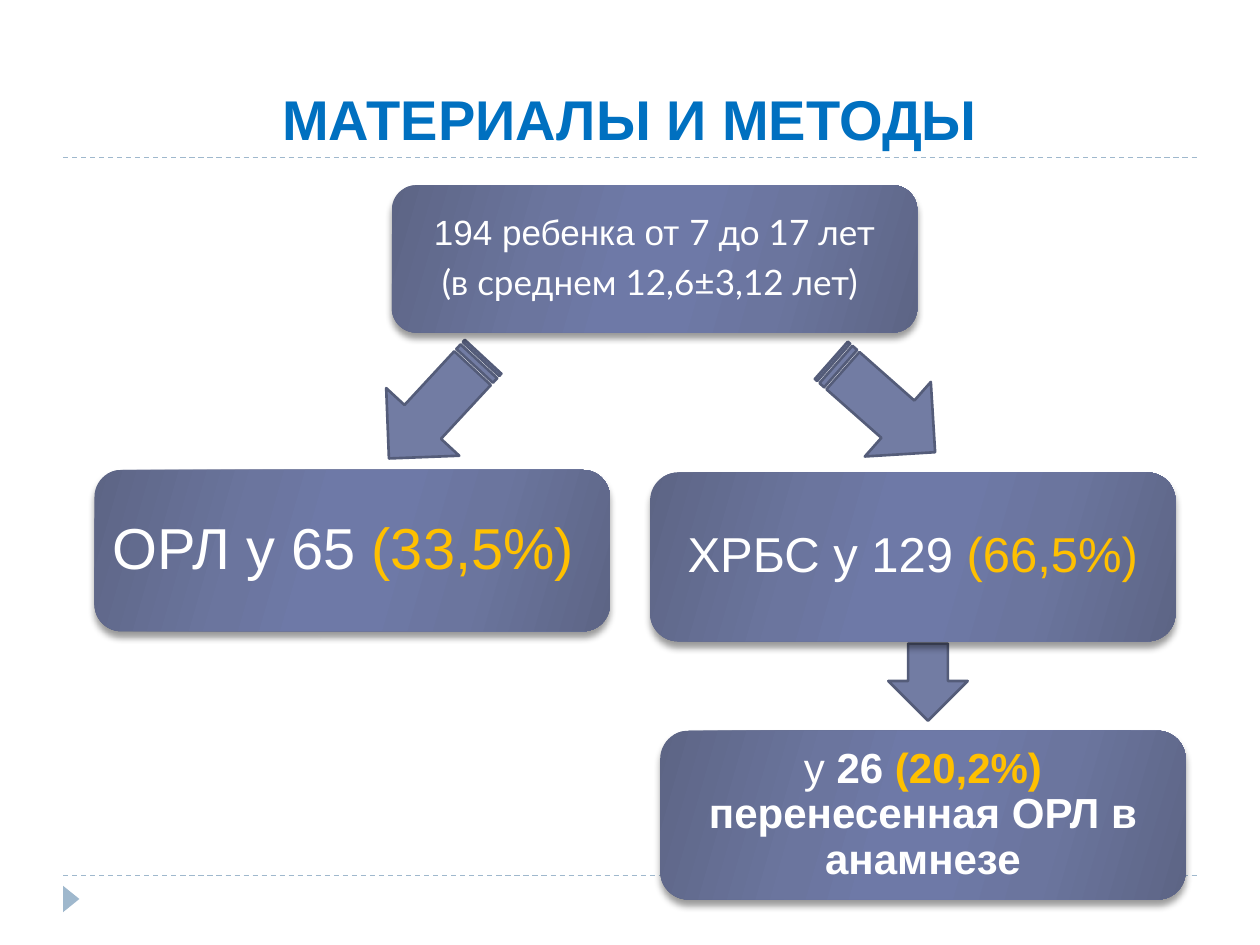
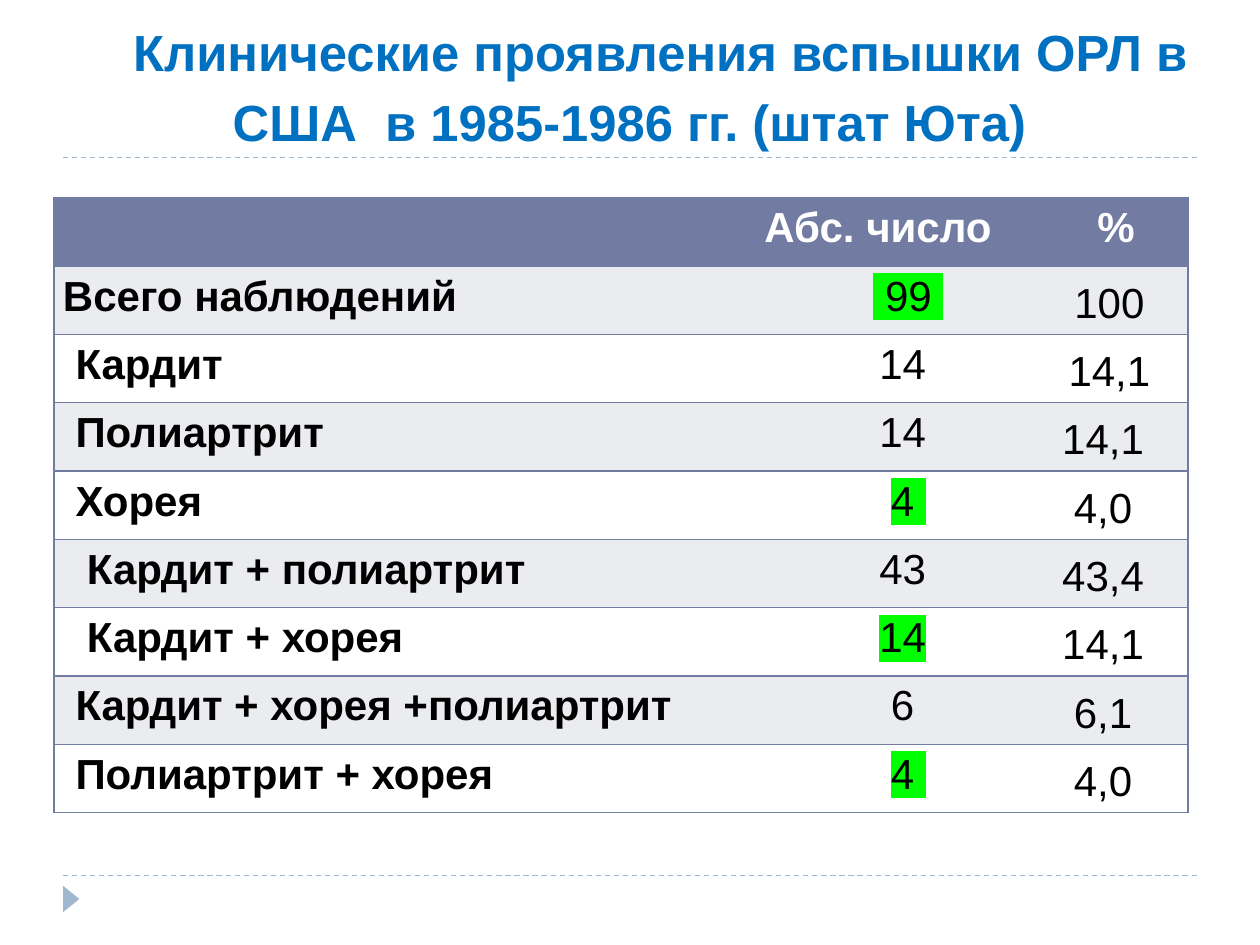
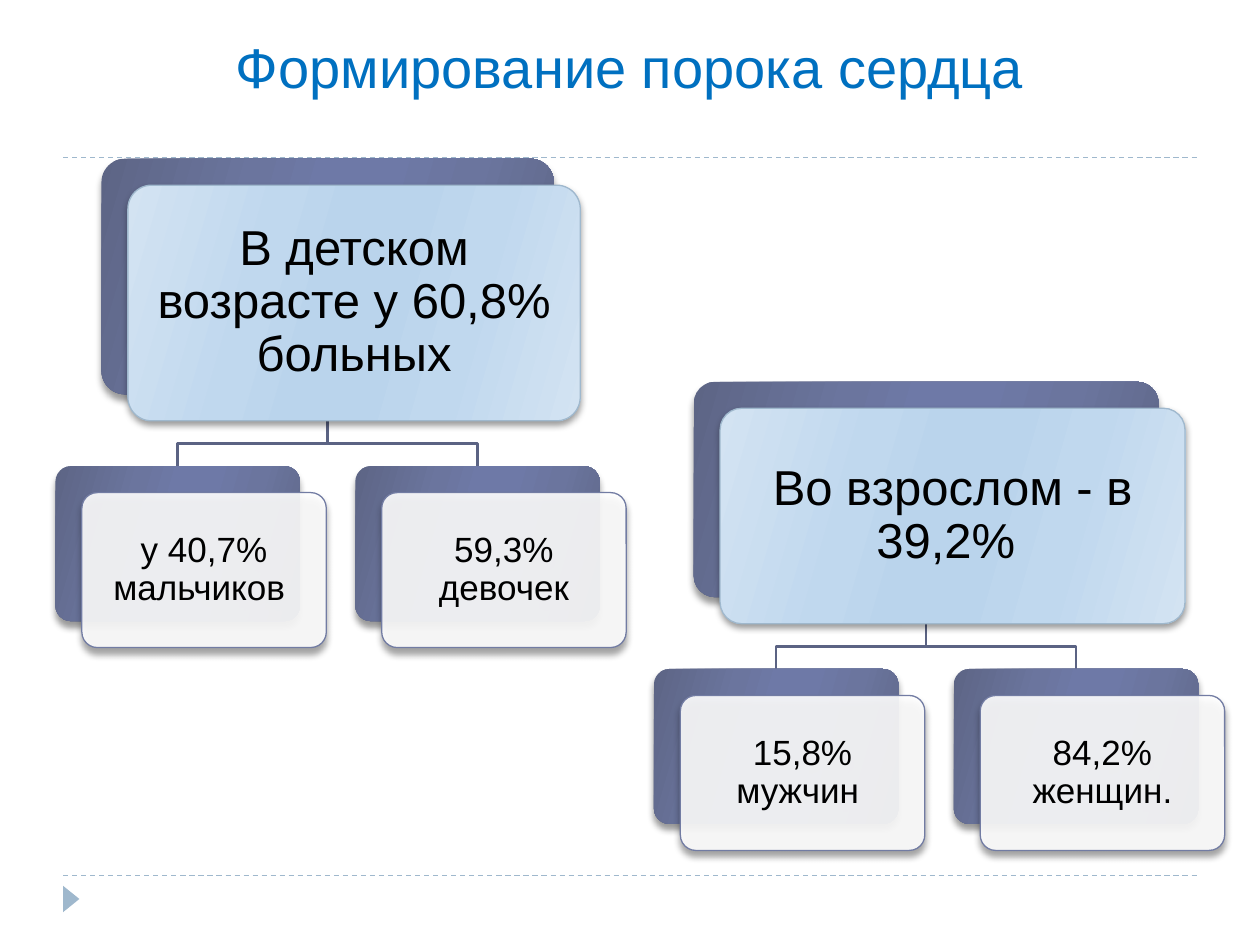
"""Builds three slides on rheumatic fever: study groups, outbreak table, heart defect trees."""
from lxml.etree import SubElement
from pptx import Presentation
from pptx.dml.color import RGBColor
from pptx.enum.dml import MSO_LINE
from pptx.enum.shapes import MSO_CONNECTOR, MSO_SHAPE
from pptx.enum.text import MSO_ANCHOR, PP_ALIGN
from pptx.oxml.ns import qn
from pptx.util import Inches, Pt

TITLE, SLATE, SLATE_EDGE, MIST = "0070C0", "727CA3", "545C79", "9FB8CD"
WHITE, BLACK, GOLD, GREEN, STRIPE = "FFFFFF", "000000", "FFC000", "00FF00", "EBECF0"
SLATE_SHEEN = ["5D6585", "6B759E", "6E79A7", "6E79A7", "6B759E", "5D6585"]
SKY_SHEEN = ["D3E3F2", "C0D8EE", "BAD4EC", "BAD4EC", "C0D8EE", "D3E3F2"]
SHEEN_STOPS = [0, 30, 45, 55, 73, 100]
CENTERED = {"alignment": PP_ALIGN.CENTER}


def paint(shape, fill=None, line=None, weight=0.75, opacity=100, shadow=0):
    """Give a shape a plain or sheen fill, an outline and a shadow offset in points."""
    properties = shape._element.spPr
    if isinstance(fill, list):
        shape.fill.gradient()
        shape.fill.gradient_angle = 360 - 16
        stops = properties.find(qn("a:gradFill")).find(qn("a:gsLst"))
        for stop in list(stops):
            stops.remove(stop)
        for place, color in zip(SHEEN_STOPS, fill):
            stop = SubElement(stops, qn("a:gs"), pos=str(place * 1000))
            SubElement(stop, qn("a:srgbClr"), val=color)
    elif fill:
        shape.fill.solid()
        shape.fill.fore_color.rgb = RGBColor.from_string(fill)
        if opacity < 100:
            color = properties.find(qn("a:solidFill"))[0]
            SubElement(color, qn("a:alpha"), val=str(opacity * 1000))
    else:
        shape.fill.background()
    if line:
        shape.line.color.rgb = RGBColor.from_string(line)
        shape.line.width = Pt(weight)
    else:
        shape.line.fill.background()
    shape.shadow.inherit = False
    if shadow:
        outer = SubElement(properties.find(qn("a:effectLst")), qn("a:outerShdw"), blurRad=str(Pt(4)),
                           dist=str(Pt(shadow)), dir="5400000", rotWithShape="0")
        color = SubElement(outer, qn("a:srgbClr"), val=BLACK)
        SubElement(color, qn("a:alpha"), val="40000")


def write(frame, paragraphs, font, layout, indent=0, **frame_format):
    """Fill a text frame with paragraphs, each a list of (text, font changes) pairs."""
    for name, value in frame_format.items():
        setattr(frame, name, value)
    for index, spans in enumerate(paragraphs):
        para = frame.paragraphs[0] if index == 0 else frame.add_paragraph()
        for name, value in layout.items():
            setattr(para, name, value)
        if indent:
            para._p.get_or_add_pPr().set("indent", str(Inches(indent)))
        for text, changes in spans:
            span = para.add_run()
            span.text = text
            look = {"name": "Arial", "bold": False, **font, **changes}
            span.font.color.rgb = RGBColor.from_string(look.pop("color"))
            highlight = look.pop("highlight", None)
            for name, value in look.items():
                setattr(span.font, name, value)
            if highlight:
                marker = SubElement(span._r.rPr, qn("a:highlight"))
                SubElement(marker, qn("a:srgbClr"), val=highlight)
                span._r.rPr.find(qn("a:solidFill")).addnext(marker)


deck = Presentation()
deck.slide_width, deck.slide_height = Inches(10), Inches(7.5)

titles = [
    ("МАТЕРИАЛЫ И МЕТОДЫ", 0.5, 1.08, {"size": Pt(32), "bold": True}, {}, 0),
    ("Клинические проявления вспышки ОРЛ в США  в 1985-1986 гг. (штат Юта)", 0.12, 1.08,
     {"size": Pt(29), "bold": True}, {"line_spacing": 1.15}, 0.49),
    ("Формирование порока сердца", 0.5, 0.67, {"size": Pt(32)}, {}, 0),
]
for text, left, height, font, spacing, indent in titles:
    page = deck.slides.add_slide(deck.slide_layouts[6])
    for y in (6.95, 1.25):
        rule = page.shapes.add_connector(
            MSO_CONNECTOR.STRAIGHT, Inches(0.5), Inches(y), Inches(9.5), Inches(y))
        rule.line.color.rgb = RGBColor.from_string(MIST)
        rule.line.width = Pt(0.75)
        rule.line.dash_style = MSO_LINE.DASH
        SubElement(rule._element.spPr, qn("a:effectLst"))
    marker = page.shapes.add_shape(
        MSO_SHAPE.ISOSCELES_TRIANGLE, Inches(0.46), Inches(7.07), Inches(0.21), Inches(0.13))
    marker.rotation = 90
    paint(marker, MIST)
    title = page.shapes.add_textbox(
        Inches(left), Inches(0.17), Inches(10 - 2 * left), Inches(height))
    write(title.text_frame, [[(text, {})]], {"color": TITLE, **font}, {**CENTERED, **spacing},
          indent, word_wrap=True, vertical_anchor=MSO_ANCHOR.BOTTOM)

groups_page, table_page, trees_page = deck.slides

arrows = [(7.01, 5.05, 0.71, 0.63, 90), (2.91, 2.84, 1.1, 0.79, 132.8), (6.46, 2.83, 1.1, 0.79, 41.5)]
for left, top, width, height, angle in arrows:
    arrow = groups_page.shapes.add_shape(
        MSO_SHAPE.STRIPED_RIGHT_ARROW, Inches(left), Inches(top), Inches(width), Inches(height))
    arrow.rotation = angle
    paint(arrow, SLATE, SLATE_EDGE, 1.5)

bold, gold, lato = {"bold": True}, {"color": GOLD}, {"name": "Lato"}
groups = [
    (0.75, 3.73, 4.09, 1.28, 33, PP_ALIGN.LEFT, [[("ОРЛ у 65 ", {}), ("(33,5%)", gold)]]),
    (5.16, 3.75, 4.17, 1.34, 28, PP_ALIGN.CENTER, [[("ХРБС у 129 ", {}), ("(66,5%)", gold)]]),
    (3.11, 1.47, 4.17, 1.17, 20, PP_ALIGN.CENTER,
     [[("194 ребенка от ", {}), ("7 до 17 лет", lato)], [("(в среднем 12,6±3,12 лет) ", lato)]]),
    (5.24, 5.8, 4.17, 1.34, 24, PP_ALIGN.CENTER,
     [[("у ", {}), ("26 ", bold), ("(20,2%) ", {**bold, **gold}),
       ("перенесенная ОРЛ в анамнезе", bold)]]),
]
for left, top, width, height, size, alignment, paragraphs in groups:
    group = groups_page.shapes.add_shape(
        MSO_SHAPE.ROUNDED_RECTANGLE, Inches(left), Inches(top), Inches(width), Inches(height))
    paint(group, SLATE_SHEEN, shadow=3.4)
    write(group.text_frame, paragraphs, {"size": Pt(size), "color": WHITE},
          {"alignment": alignment, "line_spacing": 0.9, "space_after": Pt(0.35 * size)},
          word_wrap=True, vertical_anchor=MSO_ANCHOR.MIDDLE,
          margin_left=Inches(0.08), margin_right=Inches(0.08))

rows = [
    ("", "Абс. число ", "%", 0, False),
    ("Всего наблюдений", " 99 ", "100", 0, True),
    ("Кардит ", "14 ", "14,1", 0.1, False),
    ("Полиартрит ", "14 ", "14,1", 0.1, False),
    ("Хорея ", "4 ", "4,0", 0.1, True),
    ("Кардит + полиартрит ", "43 ", "43,4", 0.19, False),
    ("Кардит + хорея ", "14 ", "14,1", 0.19, True),
    ("Кардит + хорея +полиартрит ", "6 ", "6,1", 0.1, False),
    ("Полиартрит + хорея ", "4 ", "4,0", 0.1, True),
]
frame = table_page.shapes.add_table(
    len(rows), 3, Inches(0.43), Inches(1.57), Inches(9), Inches(4.88))
table = frame.table
table._tbl.tblPr.find(qn("a:tableStyleId")).text = "{2D5ABB26-0587-4C30-8999-92F81FD0307C}"
for column, width in zip(table.columns, (5.35, 2.37, 1.28)):
    column.width = Inches(width)
for r, (label, count, share, label_indent, marked) in enumerate(rows):
    header = r == 0
    share_indent = 0.49 if header else 0.1 if r < 3 else 0
    indents = (label_indent, 0.1 if header else 0.49, share_indent)
    for c, (text, indent) in enumerate(zip((label, count, share), indents)):
        cell = table.cell(r, c)
        edges = ["a:lnL"] * (c == 0) + ["a:lnR"] * (c == 2) + ["a:lnT", "a:lnB"]
        for edge in edges:
            border = SubElement(cell._tc.get_or_add_tcPr(), qn(edge), w=str(Pt(1)))
            SubElement(SubElement(border, qn("a:solidFill")), qn("a:srgbClr"), val=SLATE)
        cell.fill.solid()
        cell.fill.fore_color.rgb = RGBColor.from_string(SLATE if header else STRIPE if r % 2 else WHITE)
        middle = c == 2 and not header
        cell.margin_left = Inches(0 if middle else 0.07)
        cell.margin_right = Inches(0.07)
        cell.margin_top = cell.margin_bottom = 0
        cell.vertical_anchor = MSO_ANCHOR.MIDDLE if middle else MSO_ANCHOR.TOP
        justified = c == 0 or (header and c == 2)
        font = {"size": Pt(24), "color": WHITE if header else BLACK, "bold": header or c == 0}
        mark = {"highlight": GREEN} if marked and c == 1 else {}
        spans = [(text, mark)] if text else []
        if mark and text == "14 ":
            spans = [("14", mark), (" ", {})]
        write(cell.text_frame, [spans], font,
              {"alignment": PP_ALIGN.JUSTIFY if justified else PP_ALIGN.CENTER, "line_spacing": 1.15},
              indent)

CARD_OFFSET, BRANCH_GAP, BRANCH_REACH, LEAF_WIDTH, LEAF_HEIGHT = 0.21, 0.57, 1.19, 1.94, 1.23
trees = [
    (2.6, 1.26, 3.59, 1.87, "В детском возрасте у 60,8% больных",
     ["у 40,7% мальчиков ", "59,3% девочек"]),
    (7.35, 3.03, 3.69, 1.71, "Во взрослом - в 39,2% ", ["15,8% мужчин ", "84,2% женщин."]),
]
for center, top, width, height, root, leaves in trees:
    bottom = top + height
    leaf_top = bottom + BRANCH_GAP
    cards = [(center, top, width, height, root, 28, SKY_SHEEN, MIST, 100, 2)]
    for side, leaf in zip((-1, 1), leaves):
        leaf_center = center + side * BRANCH_REACH
        bend = leaf_top - 0.18
        branch = trees_page.shapes.build_freeform(Inches(center), Inches(bottom))
        corners = [(center, bend), (leaf_center, bend), (leaf_center, leaf_top)]
        branch.add_line_segments([(Inches(x), Inches(y)) for x, y in corners], close=False)
        paint(branch.convert_to_shape(), line="5B6383", weight=1.5)
        cards.append((leaf_center, leaf_top, LEAF_WIDTH, LEAF_HEIGHT, leaf, 20, WHITE, SLATE, 90, 3.4))
    for middle, y, card_width, card_height, text, size, fill, line, opacity, shadow in cards:
        looks = [(0, SLATE_SHEEN, None, 100, 3.4), (CARD_OFFSET, fill, line, opacity, shadow)]
        for offset, card_fill, card_line, card_opacity, card_shadow in looks:
            card = trees_page.shapes.add_shape(
                MSO_SHAPE.ROUNDED_RECTANGLE, Inches(middle - card_width / 2 + offset),
                Inches(y + offset), Inches(card_width), Inches(card_height))
            card.adjustments[0] = 0.1
            paint(card, card_fill, card_line, opacity=card_opacity, shadow=card_shadow)
        write(card.text_frame, [[(text, {})]], {"size": Pt(size), "color": BLACK},
              {**CENTERED, "line_spacing": 0.9, "space_after": Pt(0.35 * size)},
              word_wrap=True, vertical_anchor=MSO_ANCHOR.MIDDLE,
              margin_left=Inches(0.06), margin_right=Inches(0.06))

deck.save("out.pptx")
